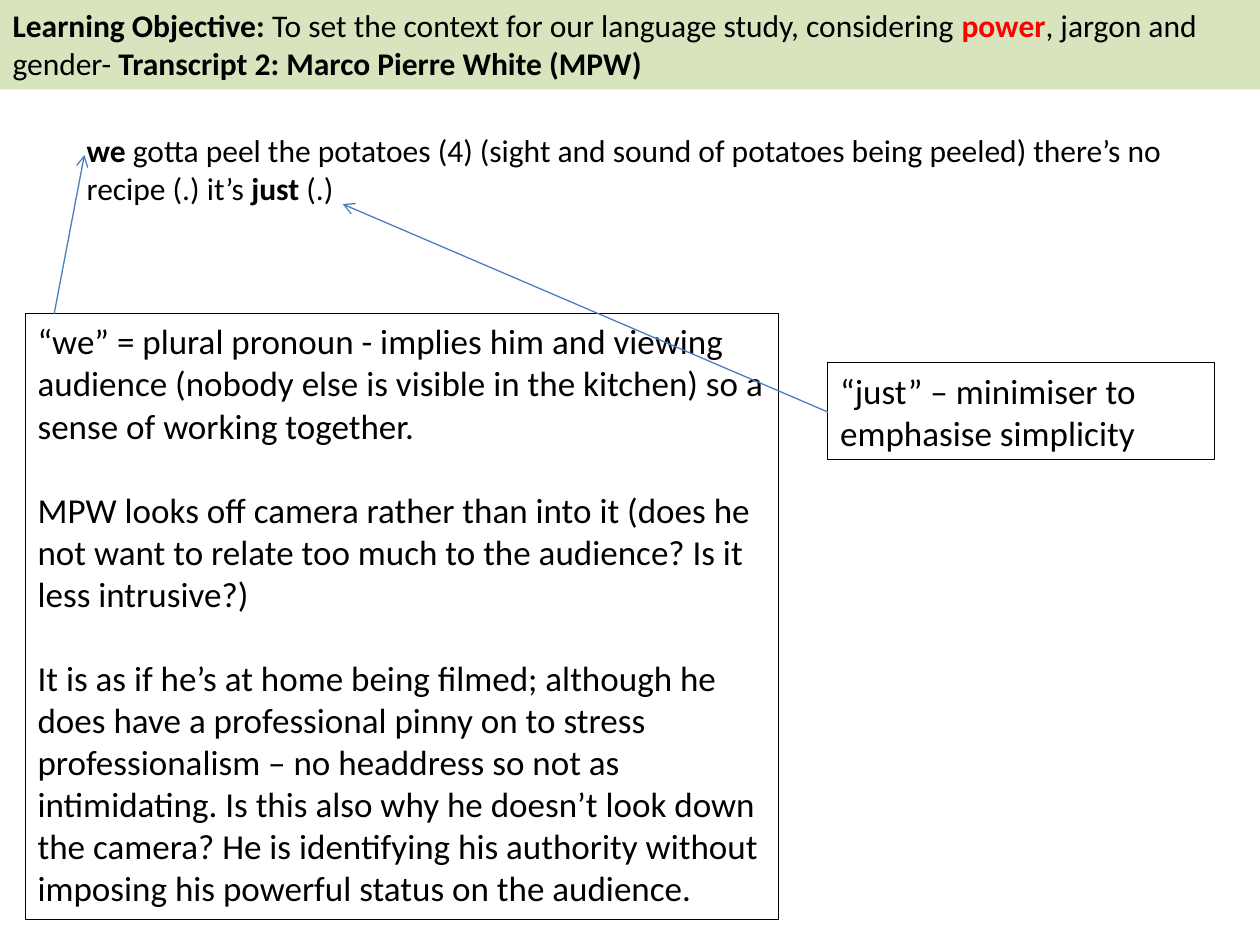
from pptx import Presentation
from pptx.dml.color import RGBColor
from pptx.enum.shapes import MSO_CONNECTOR
from pptx.enum.text import MSO_ANCHOR, MSO_AUTO_SIZE, PP_ALIGN
from pptx.oxml.ns import qn
from pptx.util import Inches, Pt
from lxml.etree import SubElement

BLACK = RGBColor(0x00, 0x00, 0x00)
RED = RGBColor(0xFF, 0x00, 0x00)
GREEN = RGBColor(0xD7, 0xE4, 0xBD)
BLUE = RGBColor(0x4B, 0x7E, 0xBC)


def write_text(sp, paragraphs, size=18, gap=0):
    tf = sp.text_frame
    tf.word_wrap = True
    tf.auto_size = MSO_AUTO_SIZE.NONE
    tf.vertical_anchor = MSO_ANCHOR.TOP
    for i, runs in enumerate(paragraphs):
        p = tf.add_paragraph() if i else tf.paragraphs[0]
        p.alignment = PP_ALIGN.LEFT
        p.space_before = Pt(gap if i else 0)
        for text, bold, color in runs:
            r = p.add_run()
            r.text = text
            r.font.name = "Calibri"
            r.font.size = Pt(size)
            r.font.bold = bold
            r.font.color.rgb = color


prs = Presentation()
prs.slide_width = Inches(10)
prs.slide_height = Inches(7.5)
slide = prs.slides.add_slide(prs.slide_layouts[5])

title = slide.shapes.title
title.left, title.top = Inches(0), Inches(0)
title.width, title.height = Inches(10), Inches(0.71)
title.fill.solid()
title.fill.fore_color.rgb = GREEN
write_text(title, [[
    ("Learning Objective: ", True, BLACK),
    ("To set the context for our language study, considering ", False, BLACK),
    ("power", True, RED),
    (", jargon and gender- ", False, BLACK),
    ("Transcript 2: Marco Pierre White (MPW)", True, BLACK),
]])

transcript = slide.shapes.add_textbox(Inches(0.59), Inches(0.99), Inches(8.74), Inches(0.71))
write_text(transcript, [[
    ("we ", True, BLACK),
    ("gotta peel the potatoes (4) (sight and sound of potatoes being peeled) "
     "there’s no recipe (.) it’s ", False, BLACK),
    ("just ", True, BLACK),
    ("(.)", False, BLACK),
]])

we_notes = [
    "“we” = plural pronoun - implies him and viewing audience (nobody else is "
    "visible in the kitchen) so a sense of working together.",
    "MPW looks off camera rather than into it (does he not want to relate too "
    "much to the audience? Is it less intrusive?)",
    "It is as if he’s at home being filmed; although he does have a professional "
    "pinny on to stress professionalism – no headdress so not as intimidating. "
    "Is this also why he doesn’t look down the camera? He is identifying his "
    "authority without imposing his powerful status on the audience.",
]
just_notes = ["“just” – minimiser to emphasise simplicity"]

annotations = [
    (we_notes, (0.2, 2.49, 5.98, 4.81), (0.43, 2.49, 0.67, 1.23)),
    (just_notes, (6.57, 2.88, 3.07, 0.77), (6.57, 3.27, 2.72, 1.62)),
]
for notes, box, arrow in annotations:
    sp = slide.shapes.add_textbox(*[Inches(v) for v in box])
    sp.line.color.rgb = BLACK
    sp.line.width = Pt(0.75)
    write_text(sp, [[(note, False, BLACK)] for note in notes], size=20, gap=24)

    line = slide.shapes.add_connector(MSO_CONNECTOR.STRAIGHT, *[Inches(v) for v in arrow])
    line.line.color.rgb = BLUE
    line.line.width = Pt(0.75)
    SubElement(line.line._get_or_add_ln(), qn("a:tailEnd"), type="arrow")
    SubElement(line._element.spPr, qn("a:effectLst"))

prs.save("out.pptx")
